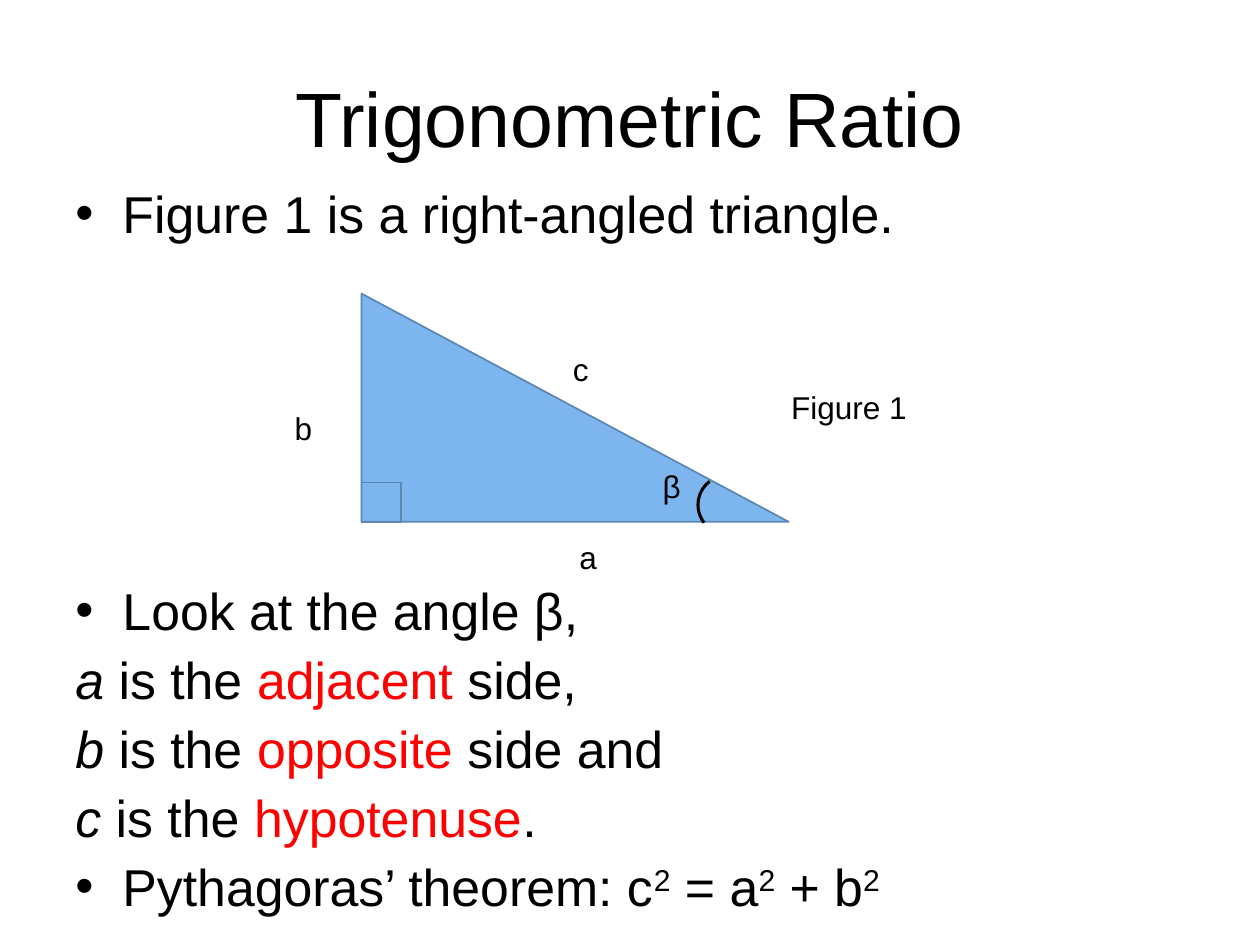
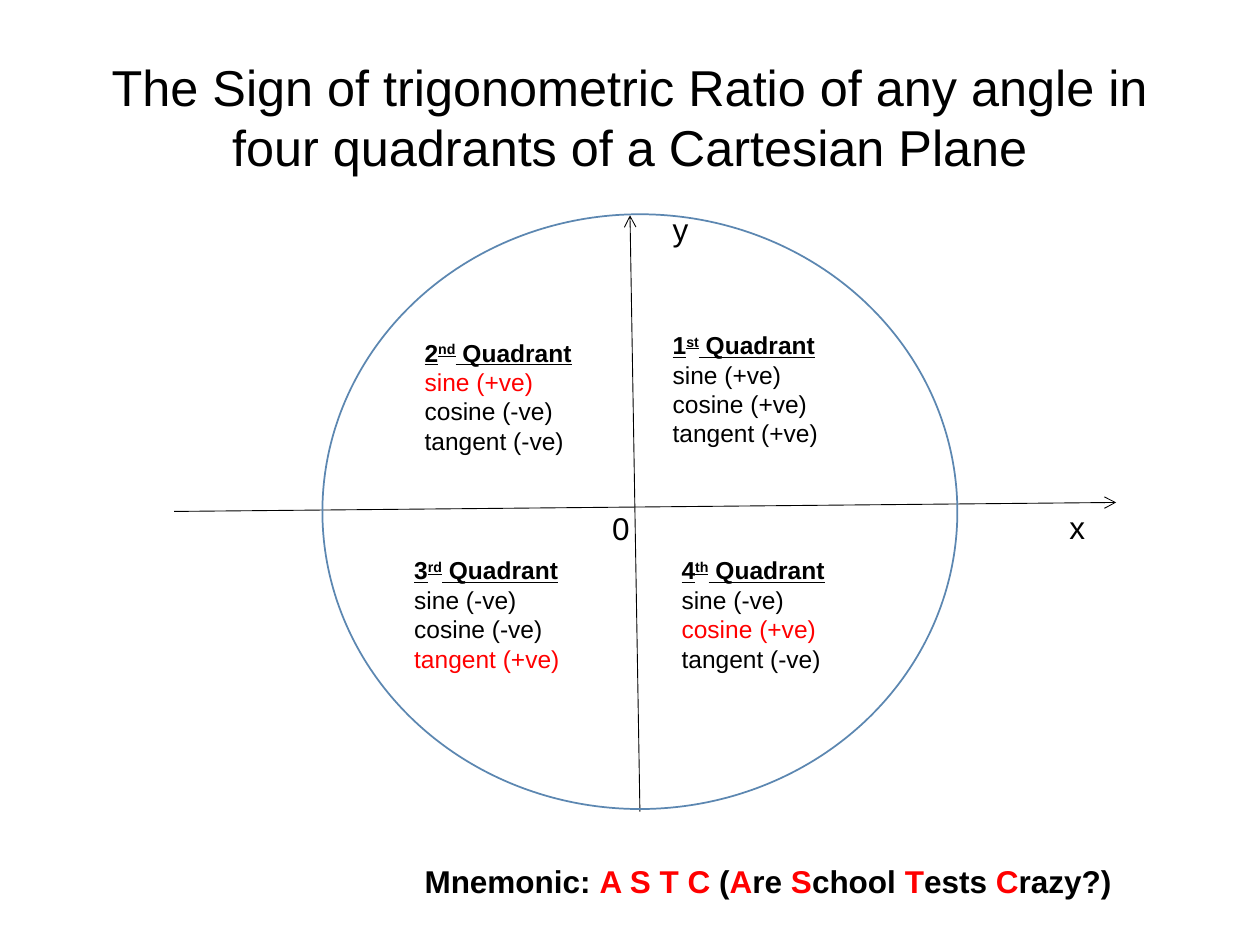
from dataclasses import dataclass

from lxml.etree import SubElement
from pptx import Presentation
from pptx.dml.color import RGBColor
from pptx.enum.shapes import MSO_CONNECTOR, MSO_SHAPE
from pptx.enum.text import MSO_ANCHOR, MSO_AUTO_SIZE, PP_ALIGN
from pptx.oxml.ns import qn
from pptx.util import Cm, Pt


@dataclass(frozen=True)
class Theme:
    """Colours and type sizes shared by the slides."""
    font: str = "Arial"
    ink: RGBColor = RGBColor(0x00, 0x00, 0x00)
    accent: RGBColor = RGBColor(0xFF, 0x00, 0x00)
    fill: RGBColor = RGBColor(0x7D, 0xB6, 0xEF)
    outline: RGBColor = RGBColor(0x5C, 0x87, 0xB1)
    title: float = 44
    long_title: float = 28.8
    body: float = 29.6
    label: float = 18
    quadrant: float = 14


@dataclass(frozen=True)
class Piece:
    """A stretch of text with its own look."""
    text: str
    accent: bool = False
    italic: bool = False
    heading: bool = False
    raised: bool = False


@dataclass(frozen=True)
class Box:
    """A region in centimetres."""
    left: float
    top: float
    width: float
    height: float

    def inner(self, left, top, width, height):
        """Return a box placed relative to this one."""
        return Box(self.left + left, self.top + top, width, height)

    def lengths(self):
        """Return left, top, width and height as lengths."""
        return Cm(self.left), Cm(self.top), Cm(self.width), Cm(self.height)


THEME = Theme()
TITLE_BOX = Box(1.27, 0.76, 22.86, 3.18)
LABEL_HEIGHT = 1.02
BODY_LEFT, BODY_TOP, BODY_WIDTH = 1.27, 3.53, 22.86
BODY_PITCH = 1.336


def write_pieces(paragraph, pieces, size, bold=False):
    """Fill a paragraph with pieces and format its runs."""
    for piece in pieces:
        run = paragraph.add_run()
        run.text = piece.text
        font = run.font
        font.name, font.size = THEME.font, Pt(size)
        font.color.rgb = THEME.accent if piece.accent else THEME.ink
        font.bold = bold or piece.heading
        font.italic = piece.italic
        font.underline = piece.heading
        if piece.raised:
            run._r.get_or_add_rPr().set("baseline", "30000")


def add_text(slide, box, lines, size, bold=False):
    """Add a wrapping text box with one paragraph per line of pieces."""
    text_frame = slide.shapes.add_textbox(*box.lengths()).text_frame
    text_frame.word_wrap = True
    for index, pieces in enumerate(lines):
        paragraph = text_frame.add_paragraph() if index else text_frame.paragraphs[0]
        write_pieces(paragraph, pieces, size, bold)
    return text_frame


def add_title(slide, text, size):
    """Add the centred slide title."""
    text_frame = add_text(slide, TITLE_BOX, [[Piece(text)]], size)
    text_frame.vertical_anchor = MSO_ANCHOR.MIDDLE
    text_frame.paragraphs[0].alignment = PP_ALIGN.CENTER


def add_label(slide, box, left, top, width, text):
    """Add a short label relative to a box."""
    place = box.inner(left, top, width, LABEL_HEIGHT)
    text_frame = add_text(slide, place, [[Piece(text)]], THEME.label)
    text_frame.auto_size = MSO_AUTO_SIZE.SHAPE_TO_FIT_TEXT


def add_outline(slide, kind, box, fill=None, line=THEME.outline, weight=1):
    """Add a preset shape with an outline and an optional fill."""
    shape = slide.shapes.add_shape(kind, *box.lengths())
    shape.shadow.inherit = False
    if fill is None:
        shape.fill.background()
    else:
        shape.fill.solid()
        shape.fill.fore_color.rgb = fill
    shape.line.color.rgb = line
    shape.line.width = Pt(weight)
    return shape


def add_axis(slide, box, start, end):
    """Add an axis arrow between two points relative to a box."""
    points = [Cm(value) for x, y in (start, end) for value in (box.left + x, box.top + y)]
    connector = slide.shapes.add_connector(MSO_CONNECTOR.STRAIGHT, *points)
    connector.line.color.rgb = THEME.ink
    connector.line.width = Pt(0.5)
    SubElement(connector.line._get_or_add_ln(), qn("a:tailEnd"), type="arrow")
    SubElement(connector._element.spPr, qn("a:effectLst"))


def add_bullet(paragraph):
    """Give a paragraph a hanging bullet."""
    properties = paragraph._p.get_or_add_pPr()
    properties.set("marL", str(Cm(0.95)))
    properties.set("indent", str(-Cm(0.95)))
    SubElement(properties, qn("a:buFont"), typeface=THEME.font)
    SubElement(properties, qn("a:buChar"), char="•")


def add_body(slide, first_row, lines, bulleted):
    """Add body lines from a row of the text grid, with bullets on some."""
    box = Box(BODY_LEFT, BODY_TOP + first_row * BODY_PITCH,
              BODY_WIDTH, len(lines) * BODY_PITCH + 0.25)
    text_frame = add_text(slide, box, lines, THEME.body)
    for index, paragraph in enumerate(text_frame.paragraphs):
        if index:
            paragraph.space_before = Pt(3.9)
        if index in bulleted:
            add_bullet(paragraph)


def add_triangle(slide, box):
    """Draw the right-angled triangle with its sides and angle named."""
    corner = 0.79
    add_outline(slide, MSO_SHAPE.RIGHT_TRIANGLE, box, THEME.fill)
    add_outline(slide, MSO_SHAPE.RECTANGLE,
                box.inner(0, box.height - corner, corner, corner))
    arc = add_outline(slide, MSO_SHAPE.ARC, box.inner(6.78, 3.66, 1.19, 1.19),
                      line=THEME.ink, weight=1.75)
    arc.rotation = 232.8
    for left, top, width, text in (
        (-1.6, 2.21, 1.6, "b"),
        (4.01, 1.02, 1.4, "c"),
        (4.14, 4.8, 1.27, "a"),
        (5.82, 3.38, 2.59, "β"),
        (8.41, 1.78, 7.19, "Figure 1"),
    ):
        add_label(slide, box, left, top, width, text)


def add_quadrant(slide, box, number, suffix, signs, accented=None):
    """List the signs of the three ratios in one quadrant."""
    heading = [Piece(number, heading=True), Piece(suffix, heading=True, raised=True),
               Piece(" Quadrant", heading=True)]
    ratios = [[Piece(f"{ratio} ({sign}ve)", accent=ratio == accented)]
              for ratio, sign in zip(("sine", "cosine", "tangent"), signs)]
    text_frame = add_text(slide, box, [heading, *ratios], THEME.quadrant)
    text_frame.auto_size = MSO_AUTO_SIZE.SHAPE_TO_FIT_TEXT


def add_plane(slide, box):
    """Draw the axes, the circle and the four quadrants."""
    add_axis(slide, box, (-2.99, 5.99), (16, 5.81))
    add_axis(slide, box, (6.4, 12.04), (6.2, 0.02))
    add_label(slide, box, 6.81, -0.21, 1.6, "y")
    add_label(slide, box, 14.81, 5.79, 1.2, "x")
    add_label(slide, box, 5.59, 5.81, 2.39, "0")
    add_outline(slide, MSO_SHAPE.OVAL, box)
    for left, top, *quadrant in (
        (6.81, 2.21, "1", "st", "+++"),
        (1.81, 2.36, "2", "nd", "+--", "sine"),
        (1.6, 6.75, "3", "rd", "--+", "tangent"),
        (6.99, 6.75, "4", "th", "-+-", "cosine"),
    ):
        add_quadrant(slide, box.inner(left, top, 4.19, 2.64), *quadrant)


def add_mnemonic(slide, box):
    """Write the mnemonic with the initials picked out."""
    pieces = [Piece("Mnemonic: "), Piece("A S T C ", accent=True), Piece("(")]
    for initial, rest in (("A", "re "), ("S", "chool "), ("T", "ests "), ("C", "razy?)")):
        pieces += [Piece(initial, accent=True), Piece(rest)]
    add_text(slide, box, [pieces], THEME.label, bold=True)


def build_ratio_slide(slide):
    """Build the slide on the sides of a right-angled triangle."""
    sides = [[Piece(side, italic=True), Piece(" is the "), Piece(name, accent=True), Piece(end)]
             for side, name, end in (("a", "adjacent", " side,"),
                                     ("b", "opposite", " side and"),
                                     ("c", "hypotenuse", "."))]
    square = Piece("2", raised=True)
    theorem = [Piece("Pythagoras’ theorem: c"), square, Piece(" = a"), square,
               Piece(" + b"), square]
    add_body(slide, 0, [[Piece("Figure 1 is a right-angled triangle.")]], {0})
    add_body(slide, 6, [[Piece("Look at the angle β,")], *sides, theorem], {0, 4})
    add_title(slide, "Trigonometric Ratio", THEME.title)
    add_triangle(slide, Box(7.29, 5.92, 8.61, 4.6))


def build_sign_slide(slide):
    """Build the slide on the signs in the four quadrants."""
    add_title(slide, "The Sign of trigonometric Ratio of any angle in "
                     "four quadrants of a Cartesian Plane", THEME.long_title)
    add_plane(slide, Box(6.5, 4.32, 12.8, 11.99))
    add_mnemonic(slide, Box(8.31, 17.25, 16.51, LABEL_HEIGHT))


def main():
    """Build the presentation and save it."""
    presentation = Presentation()
    presentation.slide_width, presentation.slide_height = Cm(25.4), Cm(19.05)
    for build in (build_ratio_slide, build_sign_slide):
        build(presentation.slides.add_slide(presentation.slide_layouts[6]))
    presentation.save("out.pptx")


if __name__ == "__main__":
    main()
